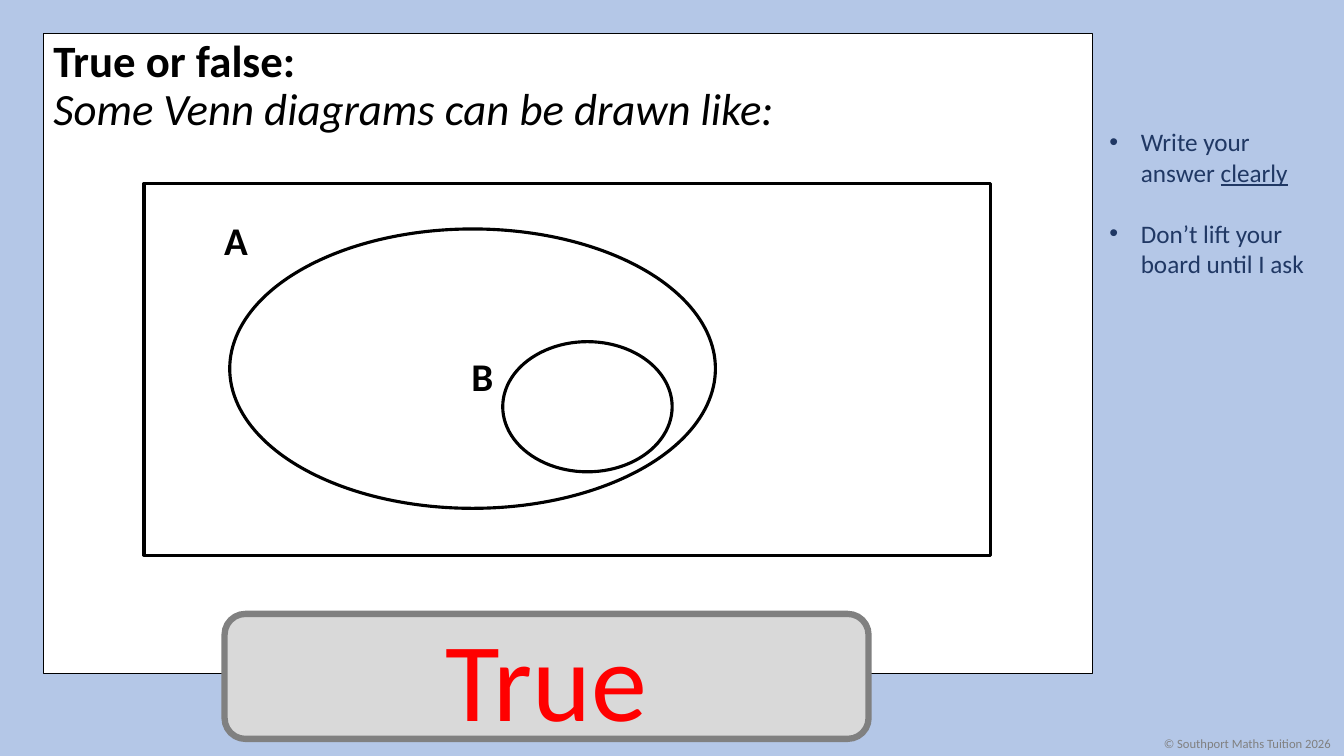
from pptx import Presentation
from pptx.dml.color import RGBColor
from pptx.enum.shapes import MSO_SHAPE
from pptx.enum.text import MSO_ANCHOR, MSO_AUTO_SIZE, PP_ALIGN
from pptx.oxml.ns import qn
from pptx.util import Cm, Pt
from lxml import etree

RECT, OVAL, ROUND = MSO_SHAPE.RECTANGLE, MSO_SHAPE.OVAL, MSO_SHAPE.ROUNDED_RECTANGLE
LEFT, RIGHT, MID = PP_ALIGN.LEFT, PP_ALIGN.RIGHT, PP_ALIGN.CENTER
TOP, CENTRE = MSO_ANCHOR.TOP, MSO_ANCHOR.MIDDLE
FIXED, GROW = MSO_AUTO_SIZE.NONE, MSO_AUTO_SIZE.SHAPE_TO_FIT_TEXT

HUES = {
    "sky": "B4C7E7", "white": "FFFFFF", "black": "000000", "navy": "203864",
    "grey": "808080", "pale": "D9D9D9", "red": "FF0000",
}
PANEL = (1.09, 0.84, 26.44, 16.13)


def hue(name):
    return RGBColor.from_string(HUES[name])


def style(item, values):
    for name, value in values.items():
        setattr(item, name, value)


def write(para, text, size, color, **looks):
    run = para.add_run()
    run.text = text
    style(run.font, {"name": "Calibri", "size": Pt(size), **looks})
    run.font.color.rgb = hue(color)


def indent(para, gap, mark=None):
    """Set a hanging indent in cm, with a bullet mark or none."""
    props = para._p.get_or_add_pPr()
    props.set("marL", str(Cm(gap)))
    props.set("indent", str(-Cm(gap)))
    if mark:
        font = etree.SubElement(props, qn("a:buFont"))
        font.set("typeface", "Arial")
        etree.SubElement(props, qn("a:buChar")).set("char", mark)
    else:
        etree.SubElement(props, qn("a:buNone"))


def add_form(shapes, kind, box, width, line="black", fill=None):
    form = shapes.add_shape(kind, *map(Cm, box))
    form.shadow.inherit = False
    if fill:
        form.fill.solid()
        form.fill.fore_color.rgb = hue(fill)
    else:
        form.fill.background()
    form.line.color.rgb = hue(line)
    form.line.width = Pt(width)
    return form


def add_box(slide, box, wrap=False):
    frame = slide.shapes.add_textbox(*map(Cm, box)).text_frame
    style(frame, {"word_wrap": wrap, "auto_size": GROW})
    return frame


def add_label(slide, box, text, size, color, align=LEFT, **looks):
    para = add_box(slide, box).paragraphs[0]
    para.alignment = align
    write(para, text, size, color, **looks)


def add_rules(slide):
    frame = add_box(slide, (27.71, 3.07, 5.89, 4.11), True)
    first, last = frame.paragraphs[0], frame.add_paragraph()
    for para in (first, last):
        indent(para, 0.79, "•")
    last.space_before = Pt(22)
    write(first, "Write your answer ", 18, "navy")
    write(first, "clearly", 18, "navy", underline=True)
    write(last, "Don’t lift your board until I ask", 18, "navy")


def fill_body(slide):
    body = slide.placeholders[1]
    body.element.getparent().append(body.element)
    style(body, dict(zip(("left", "top", "width", "height"), map(Cm, PANEL))))
    frame = body.text_frame
    style(frame, {"word_wrap": True, "auto_size": FIXED, "vertical_anchor": TOP})
    head, claim = frame.paragraphs[0], frame.add_paragraph()
    for para in (head, claim):
        indent(para, 0.64)
        style(para, {"line_spacing": 0.9, "space_before": Pt(0), "alignment": LEFT})
    write(head, "True or false:", 32, "black", bold=True)
    write(claim, "Some Venn diagrams can be drawn like:", 32, "black", italic=True)


def add_venn(slide):
    group = slide.shapes.add_group_shape()
    for kind, box in (
        (OVAL, (5.79, 5.77, 12.24, 7.04)),
        (OVAL, (12.67, 8.61, 4.27, 3.28)),
        (RECT, (3.63, 4.62, 21.34, 9.37)),
    ):
        add_form(group.shapes, kind, box, 2.25)
    for text, box in (("A", (5.38, 5.33, 1.12, 1.45)), ("B", (11.61, 8.76, 1.07, 1.45))):
        add_label(slide, box, text, 28, "black", RIGHT, bold=True)


def add_answer(slide):
    form = add_form(slide.shapes, ROUND, (5.66, 15.47, 16.23, 3.15), 4.5, "grey", "pale")
    frame = form.text_frame
    style(frame, {
        "vertical_anchor": CENTRE, "margin_left": Cm(0.28), "margin_right": Cm(0.28),
    })
    frame.paragraphs[0].alignment = MID
    write(frame.paragraphs[0], "True", 80, "red")


def main():
    deck = Presentation()
    style(deck, {"slide_width": Cm(33.87), "slide_height": Cm(19.05)})
    slide = deck.slides.add_slide(deck.slide_layouts[1])
    title = slide.shapes.title.element
    title.getparent().remove(title)
    slide.background.fill.solid()
    slide.background.fill.fore_color.rgb = hue("sky")

    add_form(slide.shapes, RECT, PANEL, 1, fill="white")
    add_rules(slide)
    add_label(slide, (29.08, 18.41, 4.78, 0.64), "© Southport Maths Tuition 2026", 9, "grey")
    fill_body(slide)
    add_venn(slide)
    add_answer(slide)
    deck.save("out.pptx")


if __name__ == "__main__":
    main()
